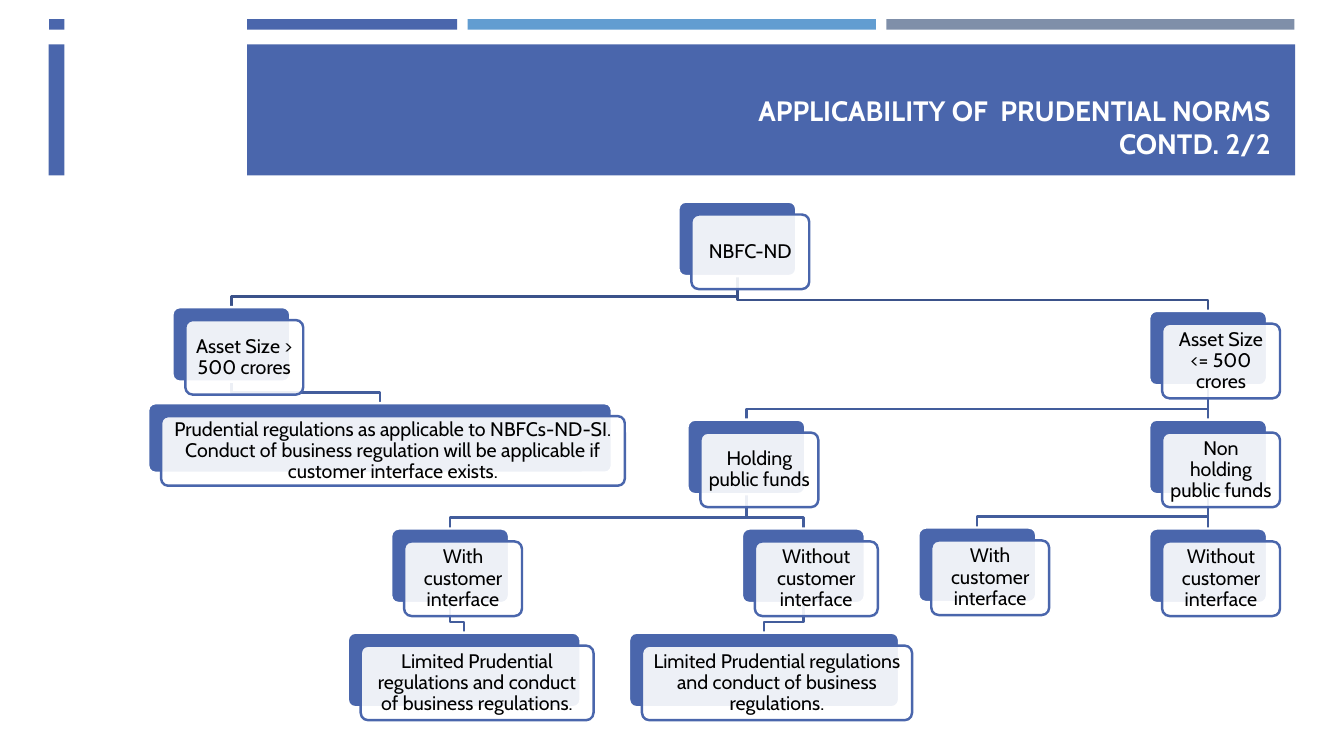
from dataclasses import dataclass
from typing import Iterator

from lxml.etree import SubElement
from pptx import Presentation
from pptx.dml.color import RGBColor
from pptx.enum.shapes import MSO_CONNECTOR, MSO_SHAPE
from pptx.enum.text import MSO_ANCHOR, PP_ALIGN
from pptx.oxml.ns import qn
from pptx.util import Inches, Pt

BLUE = RGBColor(0x4A, 0x66, 0xAC)
SKY = RGBColor(0x62, 0x9D, 0xD1)
GRAY = RGBColor(0x7F, 0x8F, 0xA9)
NAVY = RGBColor(0x3B, 0x52, 0x8A)
STEEL = RGBColor(0x43, 0x5D, 0x9C)
WHITE = RGBColor(0xFF, 0xFF, 0xFF)
BLACK = RGBColor(0x00, 0x00, 0x00)

FONT = "Cabin"
WIDE, HIGH = Inches(13.33), Inches(7.5)
COLS, ROWS = 80, 45
STEP = 0.77  # offset of a card's front from its back
DROP = 0.64  # height of a line's last leg
EDGE = Pt(1.75)
LIMITED = "Limited Prudential regulations and conduct of business regulations."


@dataclass(frozen=True)
class Bar:
    left: float
    top: float
    wide: float
    high: float
    fill: RGBColor


@dataclass(frozen=True)
class Card:
    text: str
    left: float
    top: float
    wide: float = 7.02
    high: float = 4.44
    line: RGBColor = STEEL
    kids: tuple["Card", ...] = ()

    @property
    def mid(self) -> float:
        return self.left + self.wide / 2


BARS = (
    Bar(2.92, 1.14, 24.3, 0.63, BLUE),
    Bar(52.76, 1.14, 24.3, 0.63, GRAY),
    Bar(27.84, 1.14, 24.3, 0.63, SKY),
    Bar(2.9, 2.64, 74.2, 7.8, BLUE),
    Bar(3.84, 0, 10.86, 11.46, WHITE),
)

# Decision tree
HELD = Card("Holding public funds", 40.92, 24.98, kids=(
    Card("With customer interface", 23.28, 31.46, kids=(
        Card(LIMITED, 20.7, 37.66, wide=13.86),)),
    Card("Without customer interface", 44.16, 31.46, wide=7.32, kids=(
        Card(LIMITED, 37.44, 37.66, wide=16.08),)),
))
FREE = Card("Non holding public funds", 68.4, 24.98, kids=(
    Card("With customer interface", 54.66, 31.4),
    Card("Without customer interface", 68.4, 31.46),
))
LARGE = Card("Asset Size > 500 crores", 10.26, 18.28, kids=(
    Card("Prudential regulations as applicable to NBFCs-ND-SI. Conduct of "
         "business regulation will be applicable if customer interface exists.",
         8.82, 24, wide=27.6, high=4.14),))
SMALL = Card("Asset Size <= 500 crores", 68.4, 18.5, kids=(HELD, FREE))
ROOT = Card("NBFC-ND", 40.38, 12, line=NAVY, kids=(LARGE, SMALL))


def col(n: float) -> int:
    return round(WIDE * n / COLS)


def row(n: float) -> int:
    return round(HIGH * n / ROWS)


def walk(card: Card) -> Iterator[Card]:
    yield card
    for kid in card.kids:
        yield from walk(kid)


def write(frame, text: str, *, size: int, color: RGBColor, bold: bool = False,
          align=PP_ALIGN.CENTER, anchor=MSO_ANCHOR.MIDDLE,
          inset: float = 0.06, space: float = 1.0) -> None:
    frame.word_wrap = True
    frame.vertical_anchor = anchor
    frame.margin_left = frame.margin_right = Inches(inset)
    frame.margin_top = frame.margin_bottom = Inches(0.06)
    para = frame.paragraphs[0]
    para.text = text
    para.alignment = align
    para.line_spacing = space
    for run in para.runs:
        run.font.name = FONT
        run.font.size = Pt(size)
        run.font.bold = bold
        run.font.color.rgb = color


def block(shapes, kind, left: float, top: float, wide: float, high: float,
          fill: RGBColor, edge: RGBColor | None = None):
    shape = shapes.add_shape(kind, col(left), row(top), col(wide), row(high))
    shape.shadow.inherit = False
    shape.fill.solid()
    shape.fill.fore_color.rgb = fill
    if edge is None:
        shape.line.fill.background()
    else:
        shape.line.color.rgb = edge
        shape.line.width = EDGE
    return shape


def link(shapes, card: Card, kid: Card) -> None:
    start, end = col(card.mid), col(kid.mid)
    base, tip = row(card.top + card.high), row(kid.top)
    if start == end:
        line = shapes.add_connector(MSO_CONNECTOR.STRAIGHT, start, base, end, tip)
    else:
        bend = row(kid.top - DROP)
        path = shapes.build_freeform(start, base)
        path.add_line_segments([(start, bend), (end, bend), (end, tip)], close=False)
        line = path.convert_to_shape()
        line.fill.background()
    line.line.color.rgb = card.line
    line.line.width = EDGE
    SubElement(line._element.spPr, qn("a:effectLst"))


def draw(shapes, card: Card) -> None:
    kind = MSO_SHAPE.ROUNDED_RECTANGLE
    back = block(shapes, kind, card.left, card.top, card.wide, card.high, BLUE, WHITE)
    front = block(shapes, kind, card.left + STEP, card.top + STEP,
                  card.wide, card.high, WHITE, BLUE)
    for shape in (back, front):
        shape.adjustments[0] = 0.1
    tint = front._element.spPr.find(qn("a:solidFill"))[0]
    SubElement(tint, qn("a:alpha"), val="90000")
    write(front.text_frame, card.text, size=14, color=BLACK, space=0.9)


def main() -> None:
    deck = Presentation()
    deck.slide_width, deck.slide_height = WIDE, HIGH
    shapes = deck.slides.add_slide(deck.slide_layouts[6]).shapes

    # Header
    for bar in BARS:
        block(shapes, MSO_SHAPE.RECTANGLE, bar.left, bar.top, bar.wide, bar.high, bar.fill)
    title = shapes.add_textbox(col(33.8), row(3.24), col(42.43), row(6.66))
    write(title.text_frame, "APPLICABILITY OF  PRUDENTIAL NORMS\vCONTD. 2/2",
          size=20, color=WHITE, bold=True, align=PP_ALIGN.RIGHT,
          anchor=MSO_ANCHOR.BOTTOM, inset=0.1)

    # Lines lie behind the cards
    for card in walk(ROOT):
        for kid in card.kids:
            link(shapes, card, kid)
    for card in walk(ROOT):
        draw(shapes, card)

    deck.save("out.pptx")


if __name__ == "__main__":
    main()
